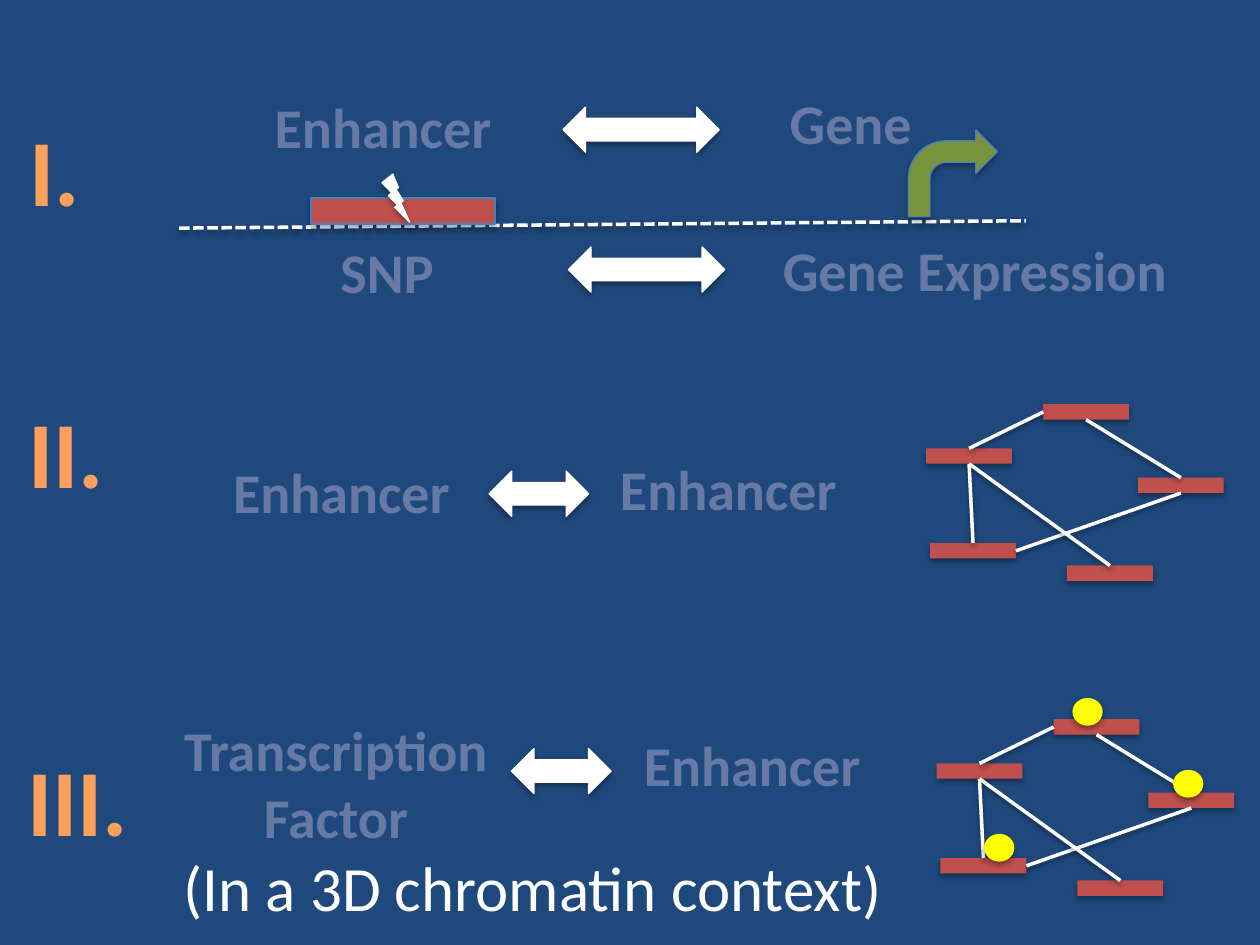
"""Build a slide on enhancer, gene and transcription factor relations."""
from pptx import Presentation
from pptx import util as u
from pptx.dml.color import RGBColor
from pptx.enum import dml, shapes, text
from pptx.oxml import ns, parse_xml

NAVY = RGBColor(0x1F, 0x49, 0x7D)
WHITE = RGBColor(0xFF, 0xFF, 0xFF)
RED = RGBColor(0xC0, 0x50, 0x4D)
BLUE = RGBColor(0x4B, 0x7E, 0xBC)
GREEN = RGBColor(0x77, 0x93, 0x3C)
YELLOW = RGBColor(0xFF, 0xFF, 0x00)
LAVENDER = RGBColor(0x67, 0x7A, 0xA5)
CREAM = RGBColor(0xF2, 0xEE, 0xDD)
PEACH = RGBColor(0xFF, 0xA3, 0x67)
ORANGE = RGBColor(0xFF, 0x9F, 0x5D)
AMBER = RGBColor(0xF3, 0x8E, 0x3A)

KIND = shapes.MSO_SHAPE
TOP, LEFT, BOTTOM, RIGHT = range(4)
NODES = [(18.67, 9.04), (21.03, 8.15), (22.94, 9.63), (21.51, 11.4), (18.75, 10.95)]
LINKS = [(0, TOP, 1, LEFT), (1, BOTTOM, 2, TOP), (2, BOTTOM, 4, RIGHT),
         (0, BOTTOM, 3, TOP), (4, TOP, 0, BOTTOM)]
FACTORS = [(19.84, 16.81), (21.62, 14.07), (23.65, 15.52)]
LABELS = [("Enhancer", 5.26, 1.75, 4.93), ("Gene", 15.65, 1.65, 3.0),
          ("SNP", 6.6, 4.67, 2.41), ("Gene Expression", 15.49, 4.62, 8.33),
          ("Enhancer", 4.42, 9.09, 4.93), ("Enhancer", 12.22, 9.04, 4.93),
          ("Enhancer", 12.7, 14.6, 4.93)]
NUMERALS = [("I.", 0.33, 2.13, 1.55), ("II.", 0.3, 7.82, 2.06), ("III.", 0.28, 14.83, 2.57)]
ARROWS = [(11.35, 2.16, 3.15), (11.46, 4.98, 3.15), (9.86, 9.5, 2.01), (10.31, 15.09, 2.01)]


def cast_shadow(item, distance, opacity):
    """Put a soft shadow below a finished shape or connector."""
    item._element.spPr.append(parse_xml(
        f'<a:effectLst {ns.nsdecls("a")}><a:outerShdw blurRad="40000" dist="{distance}" '
        f'dir="5400000" rotWithShape="0"><a:srgbClr val="000000">'
        f'<a:alpha val="{opacity}000"/></a:srgbClr></a:outerShdw></a:effectLst>'))


def add_figure(page, kind, left, top, width, height, fill, outline=None):
    """Add a filled preset shape, outlined when a colour is given."""
    figure = page.shapes.add_shape(kind, *map(u.Cm, (left, top, width, height)))
    figure.fill.solid()
    figure.fill.fore_color.rgb = fill
    if outline is None:
        figure.line.fill.background()
    else:
        figure.line.color.rgb = outline
        figure.line.width = u.Pt(0.75)
    cast_shadow(figure, 23000, 35)
    return figure


def add_line(page, start=(0, 0), end=(0, 0), joints=None, dash=None):
    """Add a white line between two points or two joined shapes."""
    line = page.shapes.add_connector(
        shapes.MSO_CONNECTOR.STRAIGHT, *map(u.Cm, (*start, *end)))
    if joints:
        line.begin_connect(*joints[0])
        line.end_connect(*joints[1])
    line.line.color.rgb = WHITE
    line.line.width = u.Pt(2)
    if dash:
        line.line.dash_style = dash
    cast_shadow(line, 20000, 38)


def add_text(page, words, left, top, width, height, size, wrap=False,
             align=text.PP_ALIGN.CENTER, color=None, bold=True):
    """Add a one-paragraph text box and return its span."""
    box = page.shapes.add_textbox(*map(u.Cm, (left, top, width, height)))
    frame = box.text_frame
    para = frame.paragraphs[0]
    span = para.add_run()
    span.text = words
    formats = {
        frame: {"word_wrap": wrap, "auto_size": text.MSO_AUTO_SIZE.SHAPE_TO_FIT_TEXT},
        para: {"alignment": align},
        span.font: {"name": "Calibri", "size": u.Pt(size), "bold": bold},
    }
    for target, values in formats.items():
        for name, value in values.items():
            setattr(target, name, value)
    if color is not None:
        span.font.color.rgb = color
    return span


def add_label(page, words, left, top, width, height=1.63, wrap=False):
    """Add a lavender label with a thin cream outline."""
    span = add_text(page, words, left, top, width, height, 32, wrap, color=LAVENDER)
    span._r.get_or_add_rPr().insert(0, parse_xml(
        f'<a:ln {ns.nsdecls("a")} w="12700"><a:solidFill>'
        f'<a:srgbClr val="{CREAM}"/></a:solidFill></a:ln>'))


def add_numeral(page, words, left, top, width):
    """Add a large section numeral with an orange gradient."""
    span = add_text(page, words, left, top, width, 2.57, 54)
    stops = "".join(
        f'<a:gs pos="{index * 25000}"><a:srgbClr val="{color}"/></a:gs>'
        for index, color in enumerate((PEACH, ORANGE, AMBER, ORANGE, PEACH)))
    span._r.get_or_add_rPr().insert(0, parse_xml(
        f'<a:gradFill {ns.nsdecls("a")}><a:gsLst>{stops}</a:gsLst>'
        f'<a:lin ang="5400000" scaled="0"/></a:gradFill>'))


def add_network(page, shift_x=0, shift_y=0):
    """Add five enhancer bars joined by lines."""
    bars = [add_figure(page, KIND.RECTANGLE, x + shift_x, y + shift_y, 1.73, 0.31, RED)
            for x, y in NODES]
    for first, first_side, second, second_side in LINKS:
        add_line(page, joints=((bars[first], first_side), (bars[second], second_side)))


def add_locus(page):
    """Add the dashed DNA strand with its enhancer, SNP and gene start."""
    add_line(page, (3.61, 4.6), (20.68, 4.45), dash=dml.MSO_LINE.SQUARE_DOT)
    add_figure(page, KIND.RECTANGLE, 6.27, 3.99, 3.71, 0.53, RED, BLUE)
    add_figure(page, KIND.BENT_ARROW, 18.31, 2.62, 1.8, 1.75, GREEN, BLUE)
    add_figure(page, KIND.LIGHTNING_BOLT, 7.7, 3.51, 0.56, 0.97, WHITE, WHITE)


def main():
    """Build and save the deck."""
    deck = Presentation()
    deck.slide_width, deck.slide_height = u.Cm(25.4), u.Cm(19.05)
    page = deck.slides.add_slide(deck.slide_layouts.get_by_name("Blank"))
    page.background.fill.solid()
    page.background.fill.fore_color.rgb = NAVY
    add_network(page)
    add_network(page, 0.21, 6.35)
    for left, top in FACTORS:
        add_figure(page, KIND.OVAL, left, top, 0.61, 0.56, YELLOW)
    add_locus(page)
    for label in LABELS:
        add_label(page, *label)
    add_label(page, "Transcription Factor", 3.18, 14.3, 7.19, 3.0, wrap=True)
    add_text(page, "(In a 3D chromatin context)", 3.45, 16.99, 14.81, 1.8, 36,
             align=text.PP_ALIGN.LEFT, color=WHITE, bold=False)
    for left, top, width in ARROWS:
        add_figure(page, KIND.LEFT_RIGHT_ARROW, left, top, width, 0.91, WHITE, WHITE)
    for numeral in NUMERALS:
        add_numeral(page, *numeral)
    deck.save("out.pptx")


if __name__ == "__main__":
    main()
